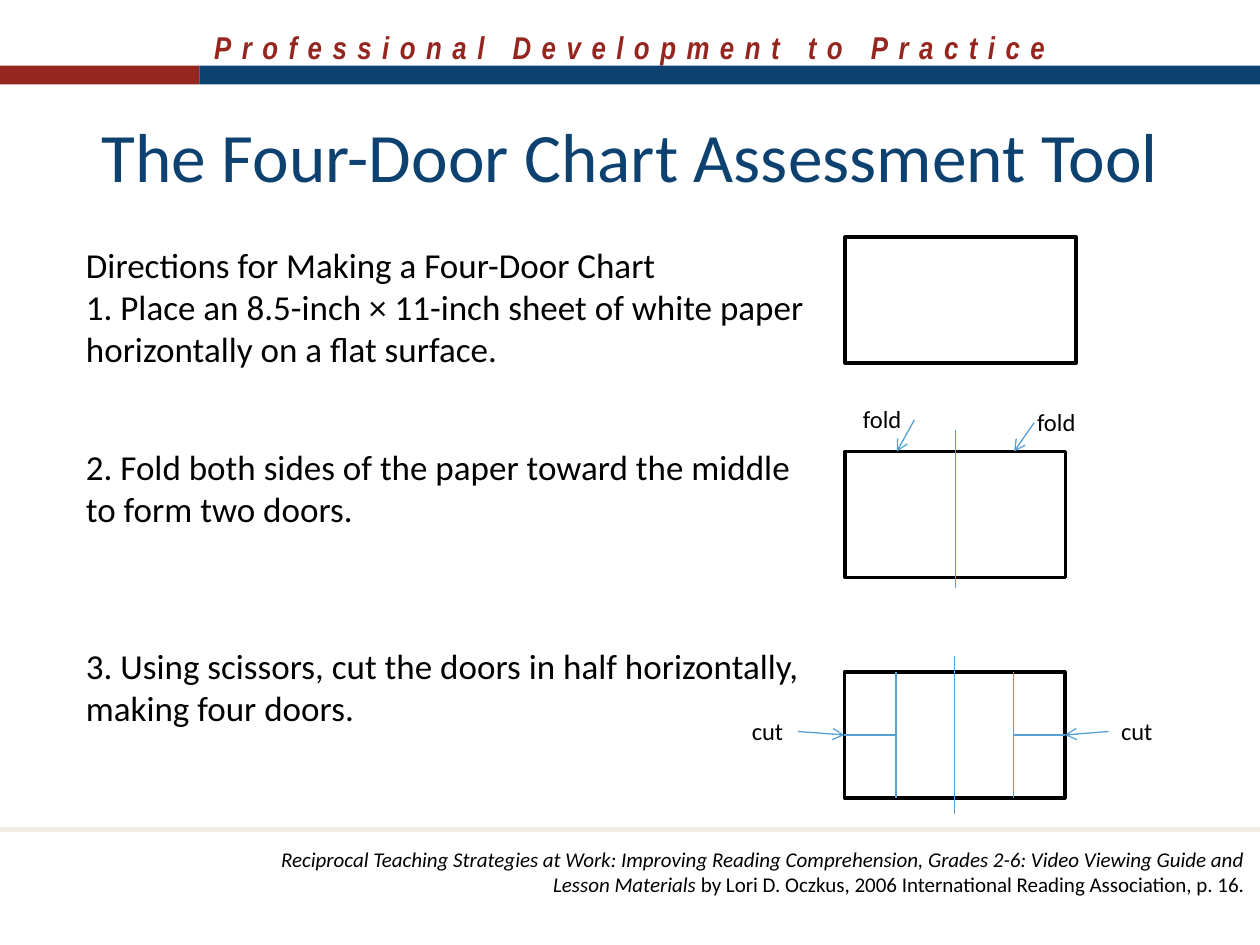
from dataclasses import dataclass

from lxml import etree
from pptx import Presentation
from pptx.dml.color import RGBColor
from pptx.enum.shapes import MSO_CONNECTOR, MSO_SHAPE
from pptx.enum.text import MSO_ANCHOR, MSO_AUTO_SIZE, PP_ALIGN
from pptx.oxml.ns import qn
from pptx.util import Pt

STRAIGHT = MSO_CONNECTOR.STRAIGHT
RECTANGLE = MSO_SHAPE.RECTANGLE
LEFT, CENTER, RIGHT = PP_ALIGN.LEFT, PP_ALIGN.CENTER, PP_ALIGN.RIGHT


@dataclass(frozen=True)
class Theme:
    red: RGBColor = RGBColor(0x95, 0x26, 0x1F)
    navy: RGBColor = RGBColor(0x0D, 0x41, 0x70)
    sand: RGBColor = RGBColor(0xF2, 0xED, 0xE2)
    sky: RGBColor = RGBColor(0x57, 0xA0, 0xD6)
    black: RGBColor = RGBColor(0, 0, 0)
    white: RGBColor = RGBColor(0xFF, 0xFF, 0xFF)
    font: str = "Calibri"
    banner_font: str = "Arial Narrow"
    title: float = 39.6
    body: float = 20
    banner: float = 18
    label: float = 14
    source: float = 12


THEME = Theme()

# Each step: its lines and the space before it, in points
DIRECTIONS = [
    (["Directions for Making a Four-Door Chart"], 0),
    (["1. Place an 8.5-inch × 11-inch sheet of white paper",
      "horizontally on a flat surface."], 0),
    (["2. Fold both sides of the paper toward the middle",
      "to form two doors."], 43.5),
    (["3. Using scissors, cut the doors in half horizontally,",
      "making four doors."], 65.5),
]
SOURCE_TITLE = ("Reciprocal Teaching Strategies at Work: Improving Reading Comprehension, "
                "Grades 2-6: Video Viewing Guide and Lesson Materials ")
SOURCE_CREDIT = "by Lori D. Oczkus, 2006 International Reading Association, p. 16."


def points(box):
    return [Pt(length) for length in box]


def style(font, size, color=THEME.black, name=THEME.font):
    font.size, font.name, font.color.rgb = Pt(size), name, color


def add_text(slide, box, text, size, align=LEFT, wrap=True):
    """Add a text box whose lines become paragraphs, and return its frame."""
    frame = slide.shapes.add_textbox(*points(box)).text_frame
    frame.word_wrap = wrap
    frame.text = text
    for paragraph in frame.paragraphs:
        paragraph.alignment = align
        for run in paragraph.runs:
            style(run.font, size)
    return frame


def add_rectangle(slide, box, fill, outline=None):
    rectangle = slide.shapes.add_shape(RECTANGLE, *points(box))
    rectangle.shadow.inherit = False
    rectangle.fill.solid()
    rectangle.fill.fore_color.rgb = fill
    if outline is None:
        rectangle.line.fill.background()
    else:
        rectangle.line.color.rgb = outline
        rectangle.line.width = Pt(2)


def add_line(slide, start, end, color=THEME.sky, width=0.75, arrow=False):
    line = slide.shapes.add_connector(STRAIGHT, *points((*start, *end)))
    line.line.color.rgb = color
    line.line.width = Pt(width)
    if arrow:
        etree.SubElement(line.line._get_or_add_ln(), qn("a:tailEnd"), type="arrow")
    etree.SubElement(line._element.spPr, qn("a:effectLst"))


def add_banner(slide, box):
    left, top, width, height = box
    frame = add_text(slide, (left, top, width, 28.8),
                     "Professional Development to Practice", THEME.banner, CENTER)
    run = frame.paragraphs[0].runs[0]
    style(run.font, THEME.banner, THEME.red, THEME.banner_font)
    run.font.bold = run.font.italic = True
    run.font._element.set("spc", "600")
    bar_height, red_width = 10.8, 114
    bar_top = top + height - bar_height
    add_rectangle(slide, (left, bar_top, red_width, bar_height), THEME.red)
    add_rectangle(slide, (left + red_width, bar_top, width - red_width, bar_height), THEME.navy)


def add_title(slide, box):
    title = slide.shapes.title
    title.left, title.top, title.width, title.height = points(box)
    frame = title.text_frame
    frame.text = "The Four-Door Chart Assessment Tool"
    frame.auto_size = MSO_AUTO_SIZE.NONE
    frame.vertical_anchor = MSO_ANCHOR.MIDDLE
    frame.paragraphs[0].alignment = CENTER
    style(frame.paragraphs[0].runs[0].font, THEME.title, THEME.navy)


def add_directions(slide, box):
    text = "\n".join(line for lines, _ in DIRECTIONS for line in lines)
    paragraphs = iter(add_text(slide, box, text, THEME.body).paragraphs)
    for lines, gap in DIRECTIONS:
        step = [next(paragraphs) for _ in lines]
        if gap:
            step[0].space_before = Pt(gap)


def add_label(slide, corner, text, width):
    add_text(slide, (*corner, width, 24.5), text, THEME.label, wrap=False)


def add_sheet(slide, box):
    add_rectangle(slide, box, THEME.white, THEME.black)


def add_middle(slide, box, above, below):
    left, top, width, height = box
    middle = left + width / 2
    add_line(slide, (middle, top - above), (middle, top + height + below))


def door_edges(box):
    """Return the x of the two folds, placed evenly about the middle."""
    left, _, width, _ = box
    middle = left + width / 2
    return middle - 33.5, middle + 33.5


def add_folded_sheet(slide, box):
    left, top, _, _ = box
    add_sheet(slide, box)
    add_middle(slide, box, 12, 6)
    left_fold, right_fold = door_edges(box)
    for fold, reach, rise, label_x, label_y in (
            (left_fold, 10, 18, left + 3, top - 30.5),
            (right_fold, 11.5, 16.5, left + 102.5, top - 29)):
        add_label(slide, (label_x, label_y), "fold", 36.7)
        add_line(slide, (fold + reach, top - rise), (fold, top), arrow=True)


def add_cut_sheet(slide, box):
    left, top, width, height = box
    right, cut_y = left + width, top + height / 2
    add_sheet(slide, box)
    add_middle(slide, box, 9, 9)
    left_fold, right_fold = door_edges(box)
    for fold, edge, tail, label_x in (
            (left_fold, left, left - 26.5, left - 60),
            (right_fold, right, right + 25, right + 25)):
        add_line(slide, (fold, top), (fold, top + height))
        add_label(slide, (label_x, cut_y - 14.3), "cut", 32.4)
        add_line(slide, (tail, cut_y - 2), (edge, cut_y), arrow=True)
        add_line(slide, (edge, cut_y), (fold, cut_y))


def add_source(slide, box):
    paragraph = add_text(slide, box, SOURCE_TITLE, THEME.source, RIGHT).paragraphs[0]
    paragraph.runs[0].font.italic = True
    credit = paragraph.add_run()
    credit.text = SOURCE_CREDIT
    style(credit.font, THEME.source)


def main():
    deck = Presentation()
    deck.slide_width, deck.slide_height = Pt(720), Pt(540)
    slide = deck.slides.add_slide(deck.slide_layouts[5])
    add_banner(slide, (0, 12.3, 720, 36))
    add_line(slide, (0, 474), (720, 474), THEME.sand, 3)
    add_title(slide, (36, 43.2, 648, 90))
    add_directions(slide, (42, 135.5, 624, 307.5))
    add_sheet(slide, (483, 135.5, 132, 72))
    add_folded_sheet(slide, (483, 258, 126, 72))
    add_cut_sheet(slide, (482.5, 384, 126, 72))
    add_source(slide, (148.5, 480, 570, 36))
    deck.save("out.pptx")


if __name__ == "__main__":
    main()
